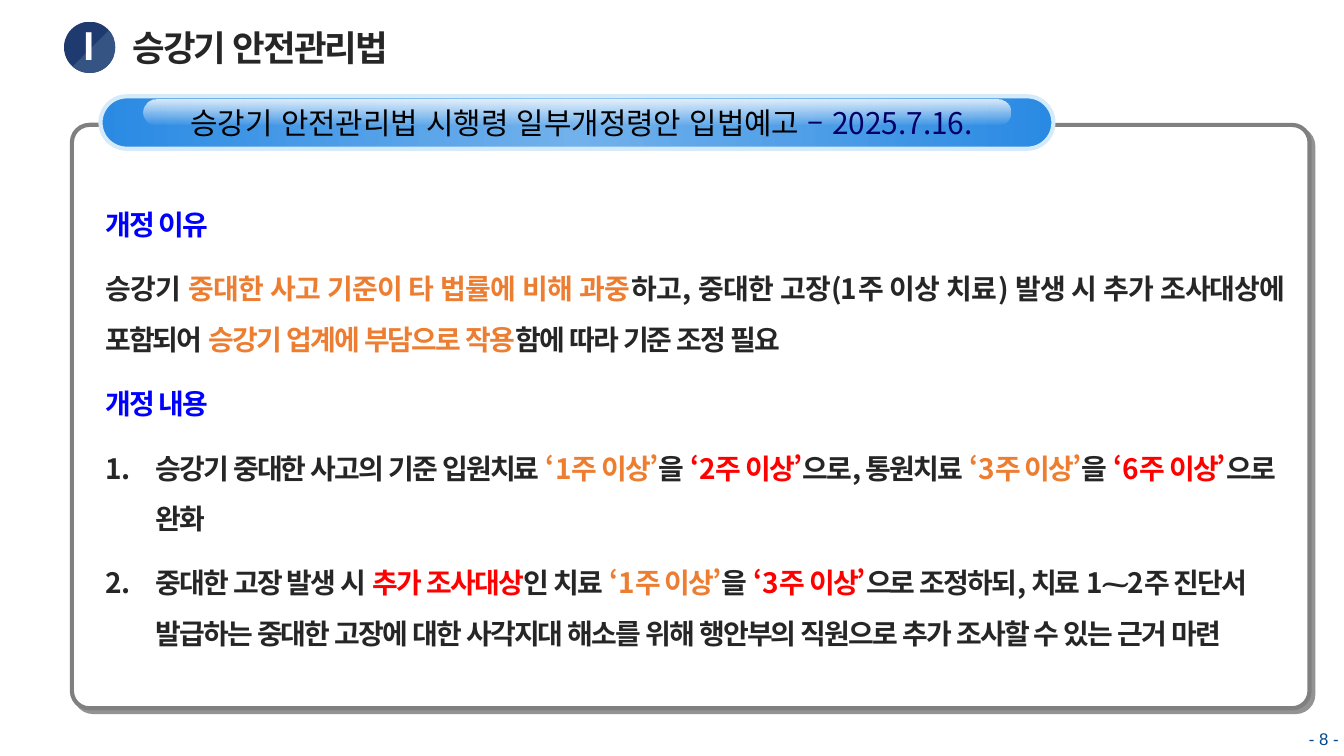
from lxml.etree import SubElement
from pptx import Presentation
from pptx.dml.color import RGBColor
from pptx.enum.lang import MSO_LANGUAGE_ID as LANG
from pptx.enum.shapes import MSO_SHAPE as SHAPE
from pptx.enum.text import MSO_ANCHOR as ANCHOR, PP_ALIGN as ALIGN
from pptx.oxml.ns import qn
from pptx.util import Cm, Pt

INK = RGBColor(0x26, 0x26, 0x26)
BLACK = RGBColor(0x00, 0x00, 0x00)
WHITE = RGBColor(0xFF, 0xFF, 0xFF)
BLUE = RGBColor(0x00, 0x00, 0xFF)
ORANGE = RGBColor(0xED, 0x7D, 0x31)
RED = RGBColor(0xFF, 0x00, 0x00)
DATE = RGBColor(0x00, 0x00, 0x66)
PAGE = RGBColor(0x00, 0x48, 0x8A)
GRAY = RGBColor(0x80, 0x80, 0x80)
SHADOW = RGBColor(0x29, 0x29, 0x29)
NAVY = RGBColor(0x1F, 0x3A, 0x6F)
STEEL = RGBColor(0x35, 0x53, 0x83)
BAND = RGBColor(0x2A, 0x8A, 0xE3)
BAND_LIGHT = RGBColor(0x71, 0xB1, 0xEC)
BAND_EDGE = RGBColor(0xD6, 0xEB, 0xFA)
FONT = "Noto Sans CJK KR"

HEADING, PLAIN, NUMBERED = "heading", "plain", "numbered"
BODY = [
    (HEADING, [("개정 이유", BLUE)]),
    (PLAIN, [
        ("승강기 ", INK), ("중대한 사고 기준이 타 법률에 비해 과중", ORANGE),
        ("하고, 중대한 고장(1주 이상 치료) 발생 시 추가 조사대상에 포함되어 ", INK),
        ("승강기 업계에 부담으로 작용", ORANGE), ("함에 따라 기준 조정 필요", INK)]),
    (HEADING, [("개정 내용", BLUE)]),
    (NUMBERED, [
        ("승강기 중대한 사고의 기준 입원치료 ", INK), ("‘1주 이상’", ORANGE),
        ("을", INK), (" ‘2주 이상’", RED), ("으로, 통원치료 ", INK),
        ("‘3주 이상’", ORANGE), ("을", INK), (" ‘6주 이상’", RED),
        ("으로 완화", INK)]),
    (NUMBERED, [
        ("중대한 고장 발생 시 ", INK), ("추가 조사대상", RED), ("인 치료", INK),
        (" ‘1주 이상’", ORANGE), ("을", INK), (" ‘3주 이상’", RED),
        ("으로 조정하되, 치료 1⁓2주 진단서 발급하는 중대한 고장에 대한 "
         "사각지대 해소를 위해 행안부의 직원으로 추가 조사할 수 있는 근거 마련", INK)]),
]


class Deck:
    """Holds the style and the current slide."""

    def __init__(self):
        self.prs = Presentation()
        self.prs.slide_width, self.prs.slide_height = Cm(25.4), Cm(14.28)
        self.s = self.prs.slides.add_slide(self.prs.slide_layouts[5])

    def run(self, p, text, size, color, bold=False, spacing=0, font=FONT):
        r = p.add_run()
        r.text = text
        r.font.size, r.font.bold, r.font.name = Pt(size), bold, font
        r.font.color.rgb = color
        r.font.language_id = LANG.KOREAN
        rPr = r._r.get_or_add_rPr()
        rPr.set("spc", str(spacing * 100))
        SubElement(rPr, qn("a:ea")).set("typeface", FONT)

    def frame(self, sp, wrap=False, inset=None):
        tf = sp.text_frame
        tf.word_wrap, tf.vertical_anchor = wrap, ANCHOR.MIDDLE
        if inset is not None:
            tf.margin_left = tf.margin_right = Cm(inset)
            tf.margin_top = tf.margin_bottom = Cm(inset)
        return tf

    def title(self, box, text):
        sp = self.s.shapes.title
        sp.left, sp.top, sp.width, sp.height = map(Cm, box)
        p = self.frame(sp).paragraphs[0]
        p.alignment = ALIGN.LEFT
        self.run(p, text, 19, INK, True, -1, "Calibri")

    def label(self, box, runs, size, align=ALIGN.CENTER, **style):
        sp = self.s.shapes.add_textbox(*map(Cm, box))
        p = self.frame(sp, inset=0).paragraphs[0]
        p.alignment = align
        for text, color in runs:
            self.run(p, text, size, color, **style)

    def shape(self, kind, box, fill=None, line=None, adj=None):
        sp = self.s.shapes.add_shape(kind, *map(Cm, box))
        sp.shadow.inherit = False
        if adj is not None:
            sp.adjustments[0] = adj
        if fill is not None:
            sp.fill.solid()
            sp.fill.fore_color.rgb = fill
        if line is None:
            sp.line.fill.background()
        else:
            sp.line.color.rgb, sp.line.width = line, Pt(2.25)
        return sp

    def color(self, parent, rgb, alpha):
        clr = SubElement(parent, qn("a:srgbClr"), val=str(rgb))
        SubElement(clr, qn("a:alpha"), val=str(alpha * 1000))

    def gradient(self, sp, angle, stops):
        sp.fill.gradient()
        sp.fill.gradient_angle = angle
        gs_lst = sp._element.spPr.find(".//" + qn("a:gsLst"))
        for gs in list(gs_lst):
            gs_lst.remove(gs)
        for pos, rgb, alpha in stops:
            gs = SubElement(gs_lst, qn("a:gs"), pos=str(pos * 1000))
            self.color(gs, rgb, alpha)

    def drop_shadow(self, sp, rgb, alpha):
        effects = sp._element.spPr.find(qn("a:effectLst"))
        shadow = SubElement(effects, qn("a:outerShdw"), blurRad="0",
                            dist=str(Pt(2.8)), dir="2700000", algn="tl", rotWithShape="0")
        self.color(shadow, rgb, alpha)

    def body(self, box, paragraphs):
        tf = self.frame(self.s.shapes.add_textbox(*map(Cm, box)), wrap=True)
        for i, (kind, runs) in enumerate(paragraphs):
            p = tf.add_paragraph() if i else tf.paragraphs[0]
            p.alignment = ALIGN.LEFT if kind == NUMBERED else ALIGN.JUSTIFY
            p.line_spacing, p.space_before = 1.5, Pt(7.5 if i else 0)
            if kind == NUMBERED:
                pPr = p._p.get_or_add_pPr()
                pPr.set("marL", str(Cm(0.95)))
                pPr.set("indent", str(-Cm(0.95)))
                SubElement(pPr, qn("a:buFont"), typeface=FONT)
                SubElement(pPr, qn("a:buAutoNum"), type="arabicPeriod")
            for text, color in runs:
                self.run(p, text, 15, color, True, -1)


def main():
    deck = Deck()
    deck.title((2.25, 0.36, 5.77, 1.07), "승강기 안전관리법")
    badge = deck.shape(SHAPE.OVAL, (1.21, 0.41, 0.97, 0.97))
    deck.gradient(badge, 315, [(52, NAVY, 100), (52, STEEL, 100)])
    deck.label((1.34, 0.43, 0.69, 0.86), [("Ⅰ", WHITE)], 20, bold=True, spacing=-1)

    panel = deck.shape(SHAPE.ROUNDED_RECTANGLE, (1.36, 2.36, 23.39, 11.02),
                       WHITE, GRAY, 0.03)
    deck.drop_shadow(panel, SHADOW, 50)
    deck.body((1.74, 3.15, 22.77, 9.58), BODY)

    band = deck.shape(SHAPE.ROUNDED_RECTANGLE, (1.9, 1.82, 18.01, 0.99),
                      line=BAND_EDGE, adj=0.5)
    deck.gradient(band, 0, [(0, BAND, 100), (50, BAND_LIGHT, 100), (100, BAND, 100)])
    gloss = deck.shape(SHAPE.ROUNDED_RECTANGLE, (2.72, 1.88, 16.38, 0.48), adj=0.5)
    deck.gradient(gloss, 270, [(0, WHITE, 83), (100, WHITE, 0)])
    deck.label((2.69, 1.93, 16.61, 0.79),
               [("승강기 안전관리법 시행령 일부개정령안 입법예고 ", BLACK),
                ("– 2025.7.16.", DATE)], 16)

    deck.label((22.35, 13.62, 2.95, 0.66), [("- 8 -", PAGE)], 9,
               ALIGN.RIGHT, font="Arial")
    deck.prs.save("out.pptx")


if __name__ == "__main__":
    main()
